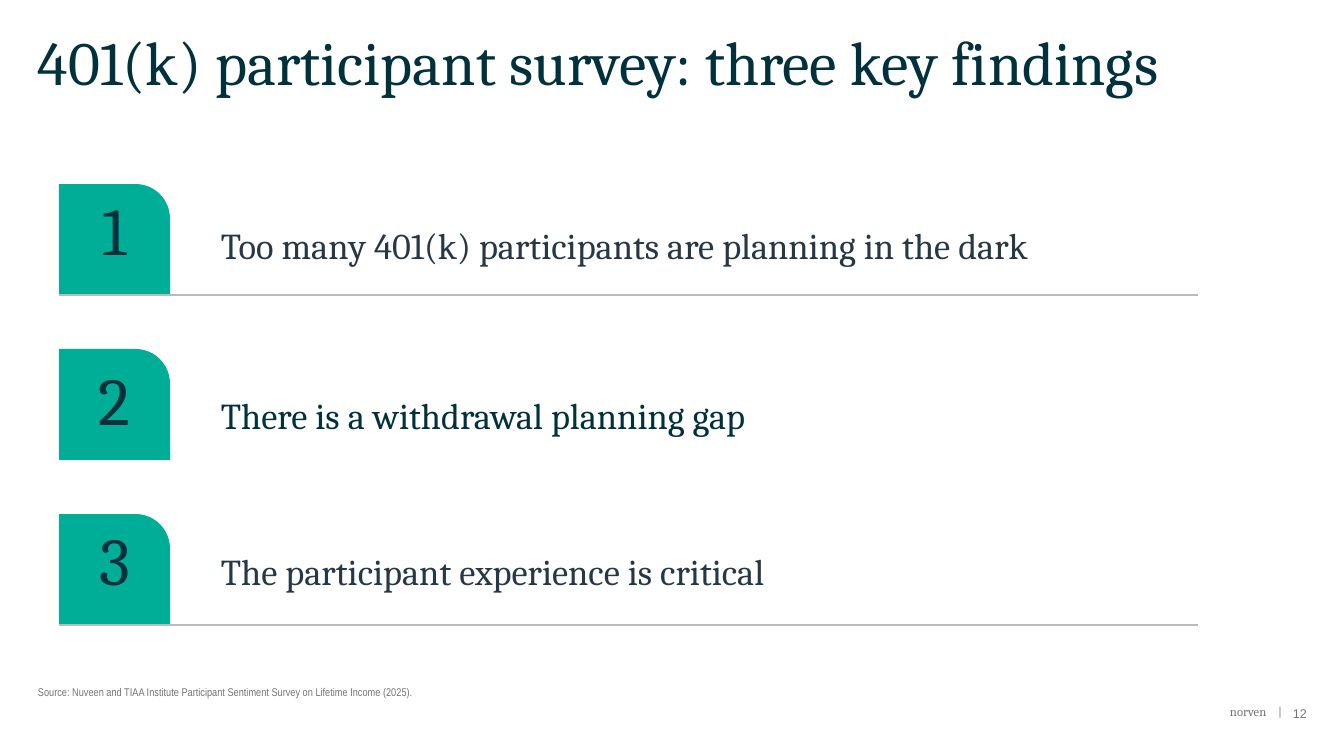
from lxml.etree import SubElement
from pptx import Presentation
from pptx.dml.color import RGBColor
from pptx.enum.shapes import MSO_CONNECTOR, MSO_SHAPE
from pptx.enum.text import MSO_ANCHOR, PP_ALIGN
from pptx.oxml.ns import qn
from pptx.util import Pt

PX = 914400 / 100.8
DARK_TEAL = RGBColor(0x00, 0x31, 0x3C)
SLATE = RGBColor(0x26, 0x37, 0x46)
GREEN = RGBColor(0x00, 0xAD, 0x97)
GREY = RGBColor(0x74, 0x74, 0x76)
RULE_GREY = RGBColor(0xBA, 0xBC, 0xBC)


def px(*lengths):
    return [round(length * PX) for length in lengths]


def add_text(text, at, size, color, font="Cambria", align=PP_ALIGN.LEFT,
             anchor=MSO_ANCHOR.TOP, spacing=None, tab=None):
    frame = slide.shapes.add_textbox(*px(*at)).text_frame
    frame.word_wrap = True
    frame.margin_left = frame.margin_top = frame.margin_right = frame.margin_bottom = 0
    frame.vertical_anchor = anchor
    paragraph = frame.paragraphs[0]
    paragraph.alignment = align
    if spacing:
        paragraph.line_spacing = spacing
    if tab:
        stops = SubElement(paragraph._p.get_or_add_pPr(), qn("a:tabLst"))
        SubElement(stops, qn("a:tab"), pos=str(px(tab)[0]), algn="l")
    run = paragraph.add_run()
    run.text = text
    run.font.name = font
    run.font.size = Pt(size)
    run.font.color.rgb = color


deck = Presentation()
deck.slide_width, deck.slide_height = px(1344, 756)
slide = deck.slides.add_slide(deck.slide_layouts[6])

add_text("401(k) participant survey: three key findings", (38, 32, 1270, 135),
         44, DARK_TEAL, spacing=0.9)

TILE_LEFT, TILE_TOP, TILE_SIZE, TILE_STEP = 59, 184, 111, 165
findings = [
    ("Too many 401(k) participants are planning in the dark", SLATE, 188, 223, True),
    ("There is a withdrawal planning gap", DARK_TEAL, 358, 393, False),
    ("The participant experience is critical", SLATE, 518, 549, True),
]
for index, (finding, color, number_top, finding_top, ruled) in enumerate(findings):
    top = TILE_TOP + index * TILE_STEP
    tile = slide.shapes.add_shape(MSO_SHAPE.ROUND_1_RECTANGLE,
                                  *px(TILE_LEFT, top, TILE_SIZE, TILE_SIZE))
    tile.adjustments[0] = 0.31
    tile.shadow.inherit = False
    tile.fill.solid()
    tile.fill.fore_color.rgb = GREEN
    tile.line.fill.background()
    add_text(str(index + 1), (TILE_LEFT, number_top, TILE_SIZE, 80), 48, DARK_TEAL,
             align=PP_ALIGN.CENTER)
    add_text(finding, (221, finding_top, 950, 44), 26, color)
    if ruled:
        bottom = top + TILE_SIZE
        rule = slide.shapes.add_connector(MSO_CONNECTOR.STRAIGHT,
                                          *px(TILE_LEFT, bottom, 1198, bottom))
        rule.line.color.rgb = RULE_GREY
        rule.line.width = Pt(1)
        SubElement(rule._element.spPr, qn("a:effectLst"))

add_text("Source: Nuveen and TIAA Institute Participant Sentiment Survey on Lifetime Income (2025).",
         (38, 659, 1270, 40), 8, GREY, font="Arial Narrow", anchor=MSO_ANCHOR.BOTTOM)
add_text("norven\t|", (1230, 704, 56, 20), 9, GREY, tab=48)
add_text("12", (1272, 706, 35, 40), 9, GREY, font="Arial", align=PP_ALIGN.RIGHT)

deck.save("out.pptx")
